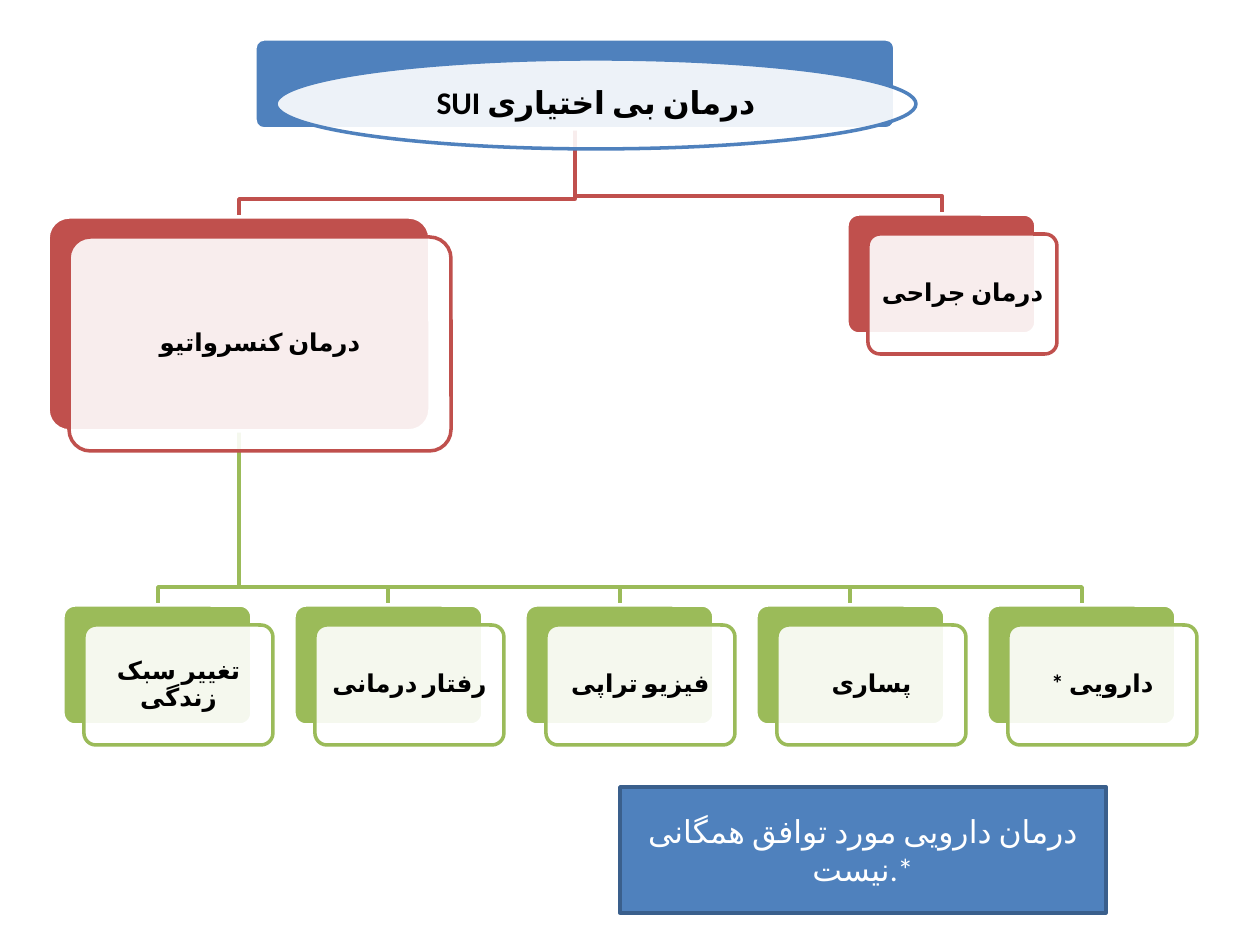
"""Build a treatment hierarchy slide with layered cards, elbow links and a note."""
from lxml.etree import SubElement
from pptx import Presentation
from pptx.dml.color import RGBColor
from pptx.enum.lang import MSO_LANGUAGE_ID as Language
from pptx.enum.shapes import MSO_SHAPE as Shape
from pptx.enum.text import MSO_ANCHOR as Anchor, PP_ALIGN as Align
from pptx.oxml.ns import qn
from pptx.util import Emu, Pt

PX = 914400 / 126
BLUE, RED, GREEN = "4F81BD", "C0504D", "9BBB59"
WHITE, BLACK, NOTE_EDGE = "FFFFFF", "000000", "3A5F8C"
FONT = "Calibri"

ROOT = {"label": "درمان بی اختیاری SUI", "box": (255, 39, 640, 90), "color": BLUE}
CONSERVATIVE = {"label": "درمان کنسرواتیو", "box": (48, 217, 382, 214), "color": RED}
SURGERY = {"label": "درمان جراحی", "box": (847, 214, 189, 120), "color": RED}
METHODS = ["تغییر سبک زندگی", "رفتار درمانی", "فیزیو تراپی", "پساری", "دارویی *"]
NOTE = "درمان دارویی مورد توافق همگانی نیست.*"
NOTE_BOX = (620, 787, 486, 126)

METHOD_LEFT, METHOD_TOP, METHOD_STEP = 63, 605, 231
METHOD_SIZE = (189, 120)
CARD_SHIFT = (21, 20)
ELBOW_RISE = 18


def px(length):
    return Emu(round(length * PX))


def rgb(color):
    return RGBColor.from_string(color)


def set_line(shape, color):
    shape.line.color.rgb = rgb(color)
    shape.line.width = Pt(2)
    shape.shadow.inherit = False


def add_panel(slide, kind, box, fill, line):
    panel = slide.shapes.add_shape(kind, *map(px, box))
    panel.fill.solid()
    panel.fill.fore_color.rgb = rgb(fill)
    set_line(panel, line)
    if kind == Shape.ROUNDED_RECTANGLE:
        panel.adjustments[0] = 0.1
    return panel


def write(shape, text, color, size, bold=False):
    frame = shape.text_frame
    frame.word_wrap = True
    frame.vertical_anchor = Anchor.MIDDLE
    paragraph = frame.paragraphs[0]
    paragraph.text = text
    paragraph.alignment = Align.CENTER
    font_format = {"name": FONT, "size": Pt(size), "bold": bold,
                   "language_id": Language.FARSI}
    for run in paragraph.runs:
        for key, value in font_format.items():
            setattr(run.font, key, value)
        run.font.color.rgb = rgb(color)
        SubElement(run._r.get_or_add_rPr(), qn("a:cs"), typeface=FONT)
    return paragraph


def add_node(slide, node, front_kind=Shape.ROUNDED_RECTANGLE, size=14, inset=8):
    left, top, width, height = node["box"]
    add_panel(slide, Shape.ROUNDED_RECTANGLE, node["box"], node["color"], WHITE)
    front_box = (left + CARD_SHIFT[0], top + CARD_SHIFT[1], width, height)
    card = add_panel(slide, front_kind, front_box, WHITE, node["color"])
    tint = card.fill._xPr.find(qn("a:solidFill"))[0]
    SubElement(tint, qn("a:alpha"), val="90000")
    for side in ("left", "top", "right", "bottom"):
        setattr(card.text_frame, f"margin_{side}", px(inset))
    paragraph = write(card, node["label"], BLACK, size, bold=True)
    paragraph.line_spacing = 0.9
    paragraph._p.get_or_add_pPr().set("rtl", "1")


def add_link(slide, parent, child):
    left, top, width, height = parent["box"]
    start_x, start_y = left + width / 2, top + height
    end_x, end_y = child["box"][0] + child["box"][2] / 2, child["box"][1]
    elbow_y = end_y - ELBOW_RISE
    builder = slide.shapes.build_freeform(start_x, start_y, scale=PX)
    builder.add_line_segments(
        [(start_x, elbow_y), (end_x, elbow_y), (end_x, end_y)], close=False)
    link = builder.convert_to_shape()
    link.fill.background()
    set_line(link, child["color"])


def main():
    deck = Presentation()
    deck.slide_width, deck.slide_height = px(1260), px(945)
    slide = deck.slides.add_slide(deck.slide_layouts[6])

    methods = [
        {"label": label, "color": GREEN,
         "box": (METHOD_LEFT + i * METHOD_STEP, METHOD_TOP, *METHOD_SIZE)}
        for i, label in enumerate(METHODS)
    ]
    add_link(slide, ROOT, SURGERY)
    for method in reversed(methods):
        add_link(slide, CONSERVATIVE, method)
    add_link(slide, ROOT, CONSERVATIVE)

    add_node(slide, ROOT, Shape.OVAL, size=18, inset=9)
    for node in [CONSERVATIVE, *methods, SURGERY]:
        add_node(slide, node)

    note = add_panel(slide, Shape.RECTANGLE, NOTE_BOX, BLUE, NOTE_EDGE)
    write(note, NOTE, WHITE, 18)
    deck.save("out.pptx")


if __name__ == "__main__":
    main()
